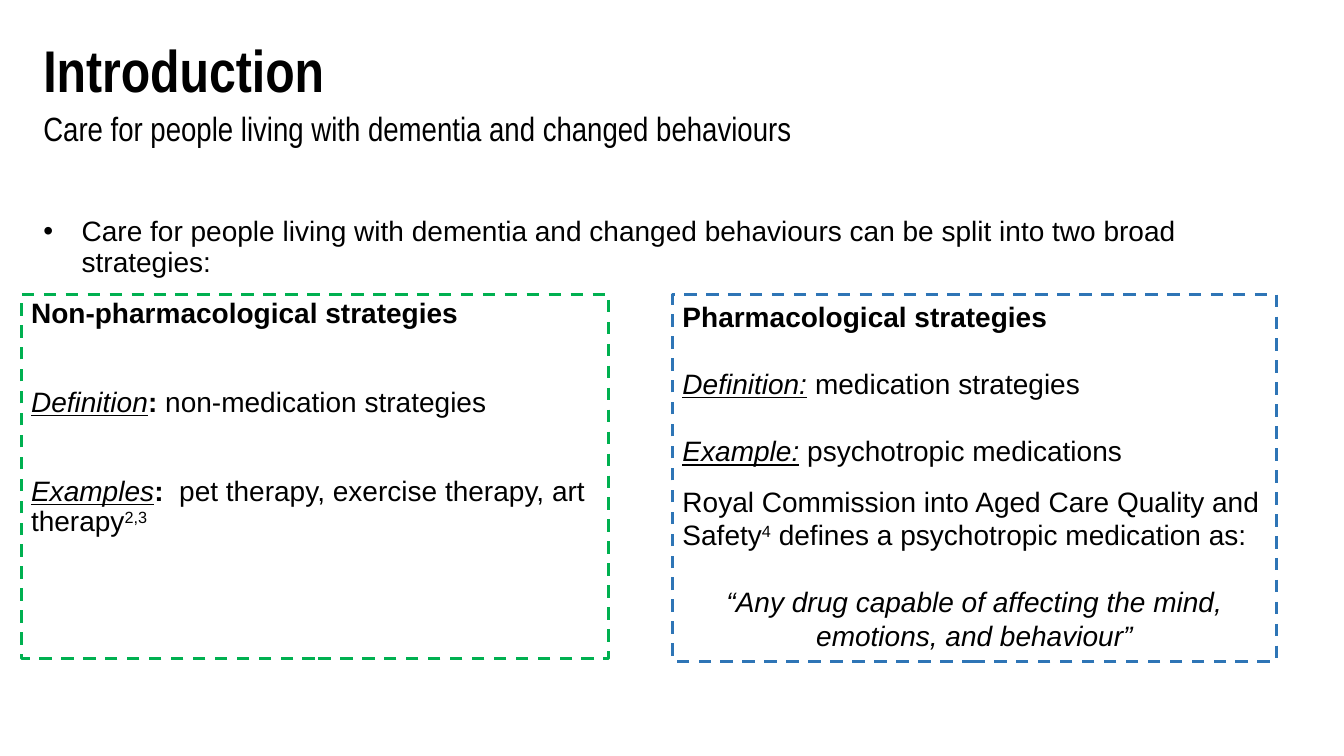
from dataclasses import dataclass, field

from pptx import Presentation
from pptx.dml.color import RGBColor as Rgb
from pptx.enum.dml import MSO_LINE_DASH_STYLE as Dash
from pptx.enum.shapes import MSO_SHAPE as Preset
from pptx.enum.text import MSO_ANCHOR as Anchor, MSO_AUTO_SIZE as AutoSize, PP_ALIGN as Align
from pptx.oxml.xmlchemy import OxmlElement
from pptx.util import Inches, Pt

COLOURS = {"text": "000000", "non_drug": "00B050", "drug": "2E75B6"}

# Run formats
PLAIN = {}
BOLD = {"bold": True}
ITALIC = {"italic": True}
LABEL = {"italic": True, "underline": True}
RAISED = {"baseline": "30000"}


@dataclass
class TextLine:
    runs: list[tuple[str, dict]]
    space_before: float = 0
    alignment: Align = Align.LEFT


@dataclass
class TextStyle:
    size: float = 20
    name: str = "Arial"
    line_spacing: float = 0.9
    bullet: str = ""
    indent: float = 0


@dataclass
class Block:
    box: tuple[float, float, float, float]
    lines: list[TextLine]
    style: TextStyle = field(default_factory=TextStyle)


@dataclass
class Panel(Block):
    colour: str = "text"


def set_bullet(paragraph, style: TextStyle) -> None:
    properties = paragraph._p.get_or_add_pPr()
    properties.set("marL", str(Inches(style.indent)))
    properties.set("indent", str(-Inches(style.indent)))
    bullet = OxmlElement("a:buChar" if style.bullet else "a:buNone")
    if style.bullet:
        bullet.set("char", style.bullet)
    properties.append(bullet)


def add_run(paragraph, text: str, run_format: dict, style: TextStyle) -> None:
    run = paragraph.add_run()
    run.text = text
    values = {"size": Pt(style.size), "name": style.name, "bold": False, **run_format}
    baseline = values.pop("baseline", None)
    for attribute, value in values.items():
        setattr(run.font, attribute, value)
    run.font.color.rgb = Rgb.from_string(COLOURS["text"])
    if baseline:
        run._r.get_or_add_rPr().set("baseline", baseline)


def fill_block(shape, block: Block) -> None:
    left, top, width, height = map(Inches, block.box)
    place = {"left": left, "top": top, "width": width, "height": height}
    for attribute, value in place.items():
        setattr(shape, attribute, value)

    frame = shape.text_frame
    frame_format = {"word_wrap": True, "auto_size": AutoSize.NONE, "vertical_anchor": Anchor.TOP}
    for attribute, value in frame_format.items():
        setattr(frame, attribute, value)

    for index, line in enumerate(block.lines):
        paragraph = frame.add_paragraph() if index else frame.paragraphs[0]
        set_bullet(paragraph, block.style)
        paragraph_format = {
            "alignment": line.alignment,
            "line_spacing": block.style.line_spacing,
            "space_before": Pt(line.space_before),
            "space_after": Pt(0),
        }
        for attribute, value in paragraph_format.items():
            setattr(paragraph, attribute, value)
        for text, run_format in line.runs:
            add_run(paragraph, text, run_format, block.style)


def add_panel(slide, panel: Panel) -> None:
    shape = slide.shapes.add_shape(Preset.RECTANGLE, *map(Inches, panel.box))
    shape.shadow.inherit = False
    shape.fill.background()
    shape.line.color.rgb = Rgb.from_string(COLOURS[panel.colour])
    shape.line.width = Pt(2.25)
    shape.line.dash_style = Dash.DASH
    fill_block(shape, panel)


# Heading, subheading and lead bullet, by placeholder number
PLACEHOLDERS = {
    0: Block((0.33, 0.36, 8.15, 0.81), [TextLine([("Introduction", BOLD)])],
             TextStyle(42, "Arial Narrow")),
    1: Block((0.33, 1.07, 10.44, 0.51),
             [TextLine([("Care for people living with dementia and changed behaviours", PLAIN)])],
             TextStyle(24, "Arial Narrow")),
    2: Block((0.33, 2.11, 11.83, 0.89),
             [TextLine([("Care for people living with dementia and changed behaviours "
                         "can be split into two broad strategies:", PLAIN)])],
             TextStyle(bullet="•", indent=0.38)),
}

# The two strategies, side by side
PANELS = [
    Panel((0.21, 2.92, 5.83, 3.61), [
        TextLine([("Non-pharmacological strategies", BOLD)]),
        TextLine([("Definition", LABEL), (": ", BOLD), ("non-medication strategies", PLAIN)], 42),
        TextLine([("Examples", LABEL), (":  ", BOLD),
                  ("pet therapy, exercise therapy, art therapy", PLAIN), ("2,3", RAISED)], 42),
    ], colour="non_drug"),
    Panel((6.67, 2.92, 5.99, 3.64), [
        TextLine([("Pharmacological strategies", BOLD)]),
        TextLine([("Definition:", LABEL), (" ", ITALIC), ("medication strategies", PLAIN)], 24),
        TextLine([("Example:", LABEL), (" ", ITALIC), ("psychotropic medications", PLAIN)], 24),
        TextLine([("Royal Commission into Aged Care Quality and Safety", PLAIN), ("4", RAISED),
                  (" defines a psychotropic medication as:", PLAIN)], 12),
        TextLine([("“Any drug capable of affecting the mind, emotions, and behaviour”", ITALIC)],
                 24, Align.CENTER),
    ], TextStyle(line_spacing=1.0), "drug"),
]


def main() -> None:
    presentation = Presentation()
    presentation.slide_width = Inches(13.33)
    presentation.slide_height = Inches(7.5)
    two_content_layout = presentation.slide_layouts[3]
    slide = presentation.slides.add_slide(two_content_layout)

    for number, block in PLACEHOLDERS.items():
        fill_block(slide.placeholders[number], block)
    for panel in PANELS:
        add_panel(slide, panel)

    presentation.save("out.pptx")


if __name__ == "__main__":
    main()
